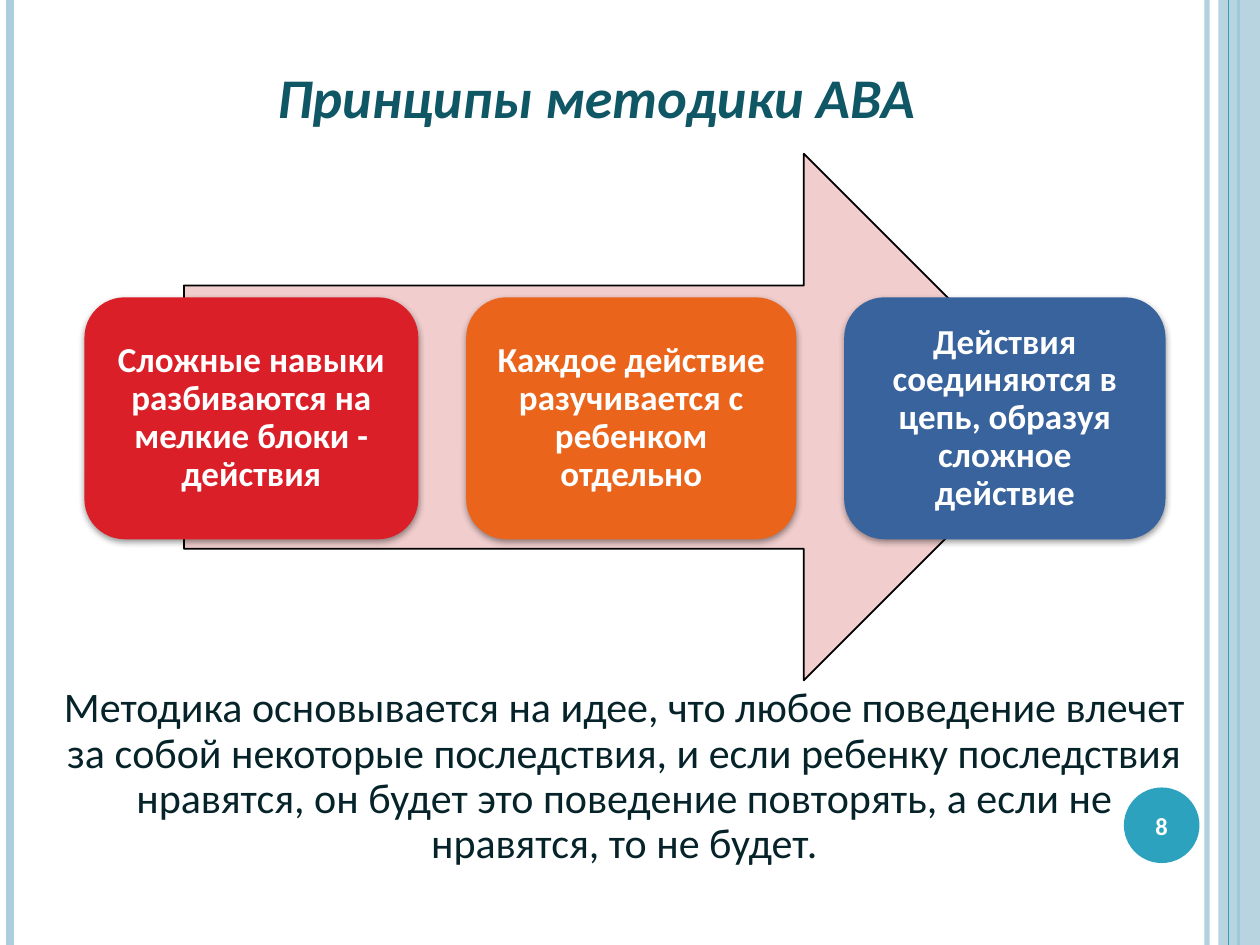
"""Build the slide on the principles of the ABA method."""
from lxml.etree import SubElement
from pptx import Presentation
from pptx.dml.color import RGBColor
from pptx.enum.shapes import MSO_CONNECTOR, MSO_SHAPE
from pptx.enum.text import MSO_ANCHOR, PP_ALIGN
from pptx.oxml.ns import qn
from pptx.util import Inches, Pt

WHITE = RGBColor(0xFF, 0xFF, 0xFF)
BLACK = RGBColor(0x00, 0x00, 0x00)
PALE = RGBColor(0xAD, 0xCE, 0xDC)
TEAL = RGBColor(0x2D, 0xA2, 0xBF)
DEEP = RGBColor(0x10, 0x57, 0x66)
INK = RGBColor(0x06, 0x23, 0x29)
PINK = RGBColor(0xF1, 0xCD, 0xCD)
RED = RGBColor(0xDA, 0x1F, 0x28)
ORANGE = RGBColor(0xEB, 0x64, 0x1B)
BLUE = RGBColor(0x39, 0x63, 0x9D)

TITLE = "Принципы методики АВА"
BODY = (
    "Методика основывается на идее, что любое поведение влечет за собой "
    "некоторые последствия, и если ребенку последствия нравятся, он будет "
    "это поведение повторять, а если не нравятся, то не будет."
)
NUMBER = "8"
CARDS = [
    ("Сложные навыки разбиваются на мелкие блоки - действия", RED, 2.65),
    ("Каждое действие разучивается с ребенком отдельно", ORANGE, 2.62),
    ("Действия соединяются в цепь, образуя сложное действие", BLUE, 2.55),
]
LEFT, TOP, HIGH, GAP = 0.67, 2.36, 1.92, 0.38
WIDE, TALL = 10, 7.5
RAILS = [(9.58, PALE, 3, 93), (0.08, PALE, 4.5, 100), (9.83, TEAL, 1.5, 100)]
EDGE = (9.75, TEAL, 0.75, 100)


def fade(fill, alpha):
    """Make a solid fill partly clear, alpha being in percent."""
    color = fill._xPr.find(qn("a:solidFill"))[0]
    SubElement(color, qn("a:alpha"), val=str(alpha * 1000))


def add_rail(slide, x, color, width, alpha):
    """Draw a full-height vertical line."""
    rail = slide.shapes.add_connector(
        MSO_CONNECTOR.STRAIGHT, Inches(x), 0, Inches(x), Inches(TALL))
    rail.line.color.rgb = color
    rail.line.width = Pt(width)
    if alpha < 100:
        fade(rail.line.fill, alpha)
    SubElement(rail._element.spPr, qn("a:effectLst"))


def add_form(slide, kind, place, color):
    """Add a plain filled shape without outline or shadow."""
    form = slide.shapes.add_shape(kind, *map(Inches, place))
    form.shadow.inherit = False
    form.fill.solid()
    form.fill.fore_color.rgb = color
    form.line.fill.background()
    return form


def cast_shade(form):
    """Give a shape a soft shadow straight below it."""
    effects = form._element.spPr.find(qn("a:effectLst"))
    shade = SubElement(
        effects, qn("a:outerShdw"), blurRad=str(Pt(4)), dist=str(Pt(1.6)),
        dir="5400000", rotWithShape="0")
    color = SubElement(shade, qn("a:srgbClr"), val=str(BLACK))
    SubElement(color, qn("a:alpha"), val="42000")


def set_text(form, text, size, color, bold=False, italic=False,
             anchor=MSO_ANCHOR.MIDDLE, inset=None, spacing=None):
    """Write one centred paragraph into a shape."""
    frame = form.text_frame
    frame.text = text
    frame.word_wrap = True
    frame.vertical_anchor = anchor
    if inset is not None:
        frame.margin_left = frame.margin_right = Inches(inset)
        frame.margin_top = frame.margin_bottom = Inches(inset)
    line = frame.paragraphs[0]
    line.alignment = PP_ALIGN.CENTER
    if spacing:
        line.line_spacing = spacing
    font = line.runs[0].font
    font.name = "Calibri"
    font.size = Pt(size)
    font.color.rgb = color
    font.bold = bold
    font.italic = italic


def add_cards(slide):
    """Set the steps in a row over the arrow."""
    x = LEFT
    for text, color, width in CARDS:
        card = add_form(slide, MSO_SHAPE.ROUNDED_RECTANGLE,
                        (x, TOP, width, HIGH), color)
        cast_shade(card)
        set_text(card, text, 20, WHITE, bold=True, inset=0.08, spacing=0.9)
        x += width + GAP


def main():
    """Build and save the deck."""
    deck = Presentation()
    deck.slide_width, deck.slide_height = Inches(WIDE), Inches(TALL)
    slide = deck.slides.add_slide(deck.slide_layouts[6])

    for rail in RAILS:
        add_rail(slide, *rail)
    band = add_form(slide, MSO_SHAPE.RECTANGLE, (9.67, 0, 0.33, TALL), PALE)
    fade(band.fill, 87)
    add_rail(slide, *EDGE)
    badge = add_form(slide, MSO_SHAPE.OVAL, (8.92, 6.25, 0.6, 0.6), TEAL)
    set_text(badge, NUMBER, 14, WHITE, bold=True, inset=0)

    arrow = add_form(slide, MSO_SHAPE.RIGHT_ARROW,
                     (1.46, 1.22, 7.01, 4.18), PINK)
    arrow.line.color.rgb = BLACK
    arrow.line.width = Pt(1)
    add_cards(slide)

    body = slide.shapes.add_textbox(*map(Inches, (0.31, 5.4, 9.29, 1.57)))
    set_text(body, BODY, 24, INK, anchor=MSO_ANCHOR.TOP, spacing=0.9)
    title = slide.shapes.add_textbox(*map(Inches, (0.59, 0.29, 8.29, 0.94)))
    set_text(title, TITLE, 32, DEEP, bold=True, italic=True)
    deck.save("out.pptx")


if __name__ == "__main__":
    main()
